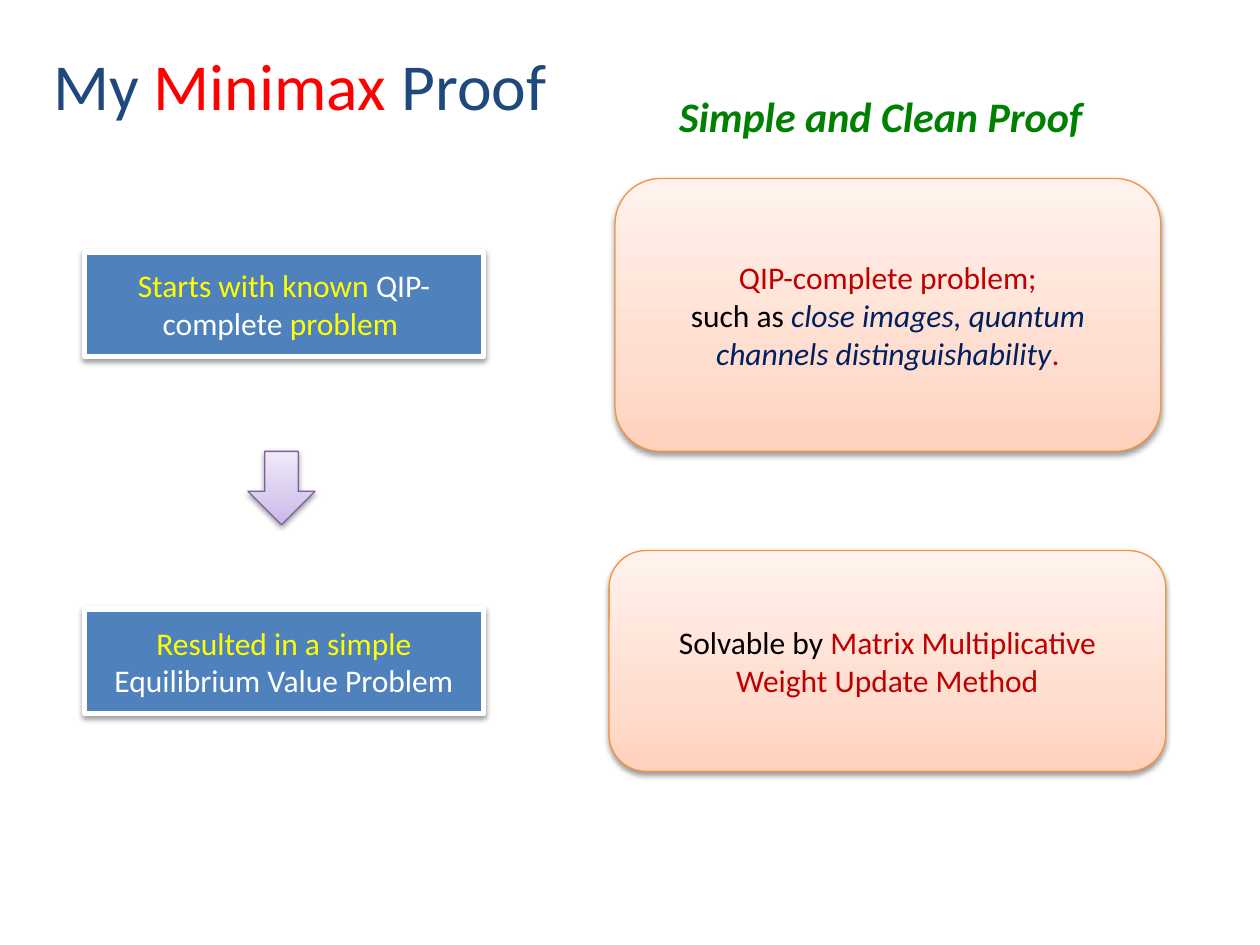
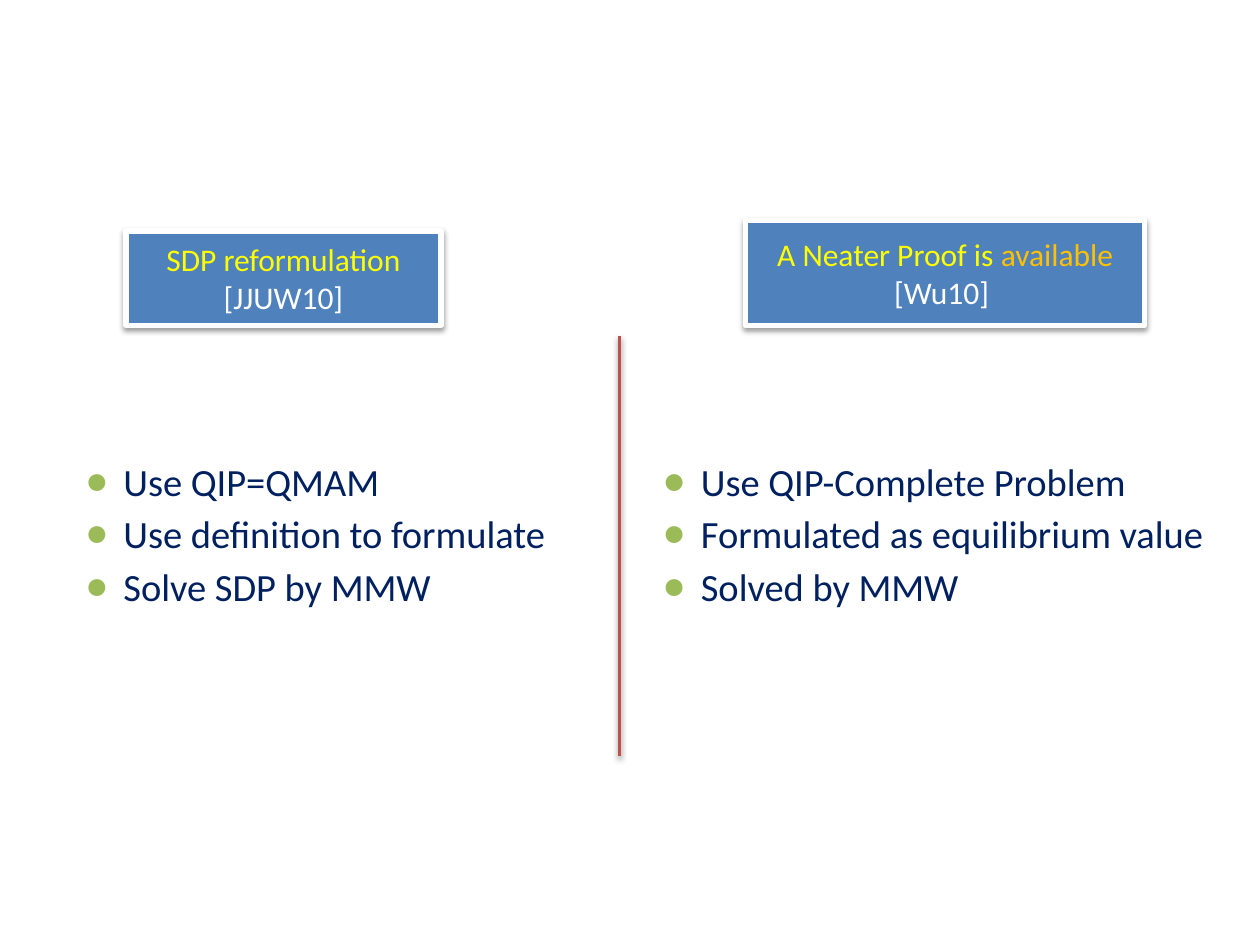
import copy

import pptx
import pptx.dml.color
import pptx.enum.shapes
import pptx.enum.text
import pptx.oxml
import pptx.oxml.ns
import pptx.util

Cm = pptx.util.Cm
Pt = pptx.util.Pt
RGBColor = pptx.dml.color.RGBColor
MSO_SHAPE = pptx.enum.shapes.MSO_SHAPE
PP_ALIGN = pptx.enum.text.PP_ALIGN
MSO_ANCHOR = pptx.enum.text.MSO_ANCHOR

FONT = "Calibri"
WHITE = RGBColor(0xFF, 0xFF, 0xFF)
BLACK = RGBColor(0x00, 0x00, 0x00)
BLUE = RGBColor(0x4F, 0x81, 0xBD)
TITLE_BLUE = RGBColor(0x1F, 0x49, 0x7D)
NAVY = RGBColor(0x00, 0x20, 0x60)
RED = RGBColor(0xFF, 0x00, 0x00)
DARK_RED = RGBColor(0xC0, 0x00, 0x00)
DIVIDER_RED = RGBColor(0xC0, 0x50, 0x4D)
YELLOW = RGBColor(0xFF, 0xFF, 0x00)
GOLD = RGBColor(0xFF, 0xC0, 0x00)
GREEN = RGBColor(0x00, 0x80, 0x00)
BULLET_GREEN = RGBColor(0x9B, 0xBB, 0x59)
ORANGE = RGBColor(0xF6, 0x92, 0x40)
PURPLE = RGBColor(0x7D, 0x60, 0xA0)
PEACH_SHADES = (RGBColor(0xFF, 0xD2, 0xBD), RGBColor(0xFF, 0xDE, 0xD0), RGBColor(0xFF, 0xF2, 0xED))
LILAC_SHADES = (RGBColor(0xC9, 0xB5, 0xE8), RGBColor(0xD8, 0xCB, 0xEE), RGBColor(0xF0, 0xEA, 0xF9))
SHADE_POSITIONS = (0, 0.35, 1)

NAMESPACE = pptx.oxml.ns.nsdecls("a")
SHADOW = (
    f'<a:effectLst {NAMESPACE}><a:outerShdw blurRad="40000" dist="20000" dir="5400000" rotWithShape="0">'
    '<a:srgbClr val="000000"><a:alpha val="38000"/></a:srgbClr></a:outerShdw></a:effectLst>'
)
BULLET_PARTS = (
    f'<a:buClr {NAMESPACE}><a:srgbClr val="{BULLET_GREEN}"/></a:buClr>',
    f'<a:buSzPct {NAMESPACE} val="95000"/>',
    f'<a:buFont {NAMESPACE} typeface="{FONT}"/>',
    f'<a:buChar {NAMESPACE} char="●"/>',
)


class Deck:
    """Holds the presentation, its style and the slide being filled.

    Each paragraph is a list of runs, and each run is (text, colour[, italic]).
    Each area is (left, top, width, height) in centimetres.
    """

    def __init__(self):
        self.presentation = pptx.Presentation()
        self.presentation.slide_width = Cm(25.4)
        self.presentation.slide_height = Cm(19.05)
        self.slide = None

    def new_slide(self):
        self.slide = self.presentation.slides.add_slide(self.presentation.slide_layouts[6])

    def fill_text(self, text_frame, paragraphs, size, alignment=PP_ALIGN.LEFT, bold=False):
        text_frame.word_wrap = True
        for index, runs in enumerate(paragraphs):
            paragraph = text_frame.add_paragraph() if index else text_frame.paragraphs[0]
            paragraph.alignment = alignment
            for text, color, *italic in runs:
                run = paragraph.add_run()
                run.text = text
                run.font.name = FONT
                run.font.size = Pt(size)
                run.font.color.rgb = color
                run.font.bold = bold
                run.font.italic = bool(italic and italic[0])

    def text(self, area, paragraphs, size, bold=False):
        box = self.slide.shapes.add_textbox(*map(Cm, area))
        self.fill_text(box.text_frame, paragraphs, size, bold=bold)
        return box.text_frame

    def title(self, runs):
        text_frame = self.text((1.07, 1.07, 23.06, 1.42), [runs], 37.5)
        text_frame.vertical_anchor = MSO_ANCHOR.BOTTOM
        text_frame.margin_left = text_frame.margin_right = text_frame.margin_bottom = 0
        text_frame.paragraphs[0].line_spacing = 0.8

    def bullets(self, area, items):
        text_frame = self.text(area, [[(item, NAVY)] for item in items], 22)
        for index, paragraph in enumerate(text_frame.paragraphs):
            properties = paragraph._p.get_or_add_pPr()
            properties.set("marL", str(Cm(0.76)))
            properties.set("indent", str(-Cm(0.76)))
            for part in BULLET_PARTS:
                properties.append(pptx.oxml.parse_xml(part))
            if index:
                paragraph.space_before = Pt(3.6)

    def add_shadow(self, shape):
        shape._element.spPr.append(pptx.oxml.parse_xml(SHADOW))

    def shape(self, kind, area, line_color, line_width, paragraphs=()):
        shape = self.slide.shapes.add_shape(kind, *map(Cm, area))
        shape.line.color.rgb = line_color
        shape.line.width = Pt(line_width)
        self.add_shadow(shape)
        shape.text_frame.vertical_anchor = MSO_ANCHOR.MIDDLE
        self.fill_text(shape.text_frame, paragraphs, 18, PP_ALIGN.CENTER)
        return shape

    def step(self, area, paragraphs):
        box = self.shape(MSO_SHAPE.RECTANGLE, area, WHITE, 3, paragraphs)
        box.fill.solid()
        box.fill.fore_color.rgb = BLUE

    def shaded(self, kind, area, line_color, shades, paragraphs=()):
        """Adds a shape whose three shades run from the bottom to the top."""
        shape = self.shape(kind, area, line_color, 0.75, paragraphs)
        shape.fill.gradient()
        shape.fill.gradient_angle = 90
        stop_list = shape._element.spPr.find(".//" + pptx.oxml.ns.qn("a:gsLst"))
        stop_list.insert(1, copy.deepcopy(stop_list[0]))
        for stop, color, position in zip(shape.fill.gradient_stops, shades, SHADE_POSITIONS):
            stop.color.rgb = color
            stop.position = position

    def explanation(self, area, paragraphs):
        self.shaded(MSO_SHAPE.ROUNDED_RECTANGLE, area, ORANGE, PEACH_SHADES, paragraphs)

    def divider(self, left, top, bottom):
        line = self.slide.shapes.add_connector(
            pptx.enum.shapes.MSO_CONNECTOR.STRAIGHT, Cm(left), Cm(top), Cm(left), Cm(bottom))
        line.line.color.rgb = DIVIDER_RED
        line.line.width = Pt(2)
        self.add_shadow(line)


def add_minimax_proof(deck):
    deck.new_slide()
    deck.title([("My ", TITLE_BLUE), ("Minimax", RED), (" Proof", TITLE_BLUE)])
    steps = (
        [("Starts with known ", YELLOW), ("QIP-complete ", WHITE), ("problem ", YELLOW)],
        [("Resulted in a simple ", YELLOW), ("Equilibrium Value Problem", WHITE)],
    )
    for index, runs in enumerate(steps):
        deck.step((1.7, 5.08 + 7.2 * index, 8.05, 2.11), [runs])
    deck.shaded(MSO_SHAPE.DOWN_ARROW, (5, 9.1, 1.35, 1.48), PURPLE, LILAC_SHADES)
    deck.explanation((12.4, 3.6, 11, 5.5), [
        [("QIP-complete problem;", DARK_RED)],
        [("such as ", BLACK),
         ("close images, quantum channels distinguishability", NAVY, True),
         (".", DARK_RED)],
    ])
    deck.explanation((12.28, 11.1, 11.22, 4.45), [
        [("Solvable by ", BLACK), ("Matrix Multiplicative Weight Update Method", DARK_RED)],
    ])
    deck.text((13.44, 1.7, 9.86, 1.27), [[("Simple and Clean Proof", GREEN, True)]], 24, bold=True)


def add_proof_comparison(deck):
    deck.new_slide()
    deck.step((2.54, 4.66, 6.35, 1.9), [[("SDP reformulation", YELLOW)], [("[JJUW10]", WHITE)]])
    deck.step((15.03, 4.45, 8.05, 2.11), [
        [("A Neater Proof is ", YELLOW), ("available ", GOLD), ("[Wu10] ", WHITE)],
    ])
    deck.divider(12.49, 6.77, 15.24)
    deck.bullets((1.48, 9.1, 11.22, 2.96), (
        "Use QIP=QMAM", "Use definition to formulate", "Solve SDP by MMW"))
    deck.bullets((13.12, 9.1, 11.86, 2.96), (
        "Use QIP-Complete Problem", "Formulated as equilibrium value", "Solved by MMW"))


def main():
    deck = Deck()
    add_minimax_proof(deck)
    add_proof_comparison(deck)
    deck.presentation.save("out.pptx")


if __name__ == "__main__":
    main()
